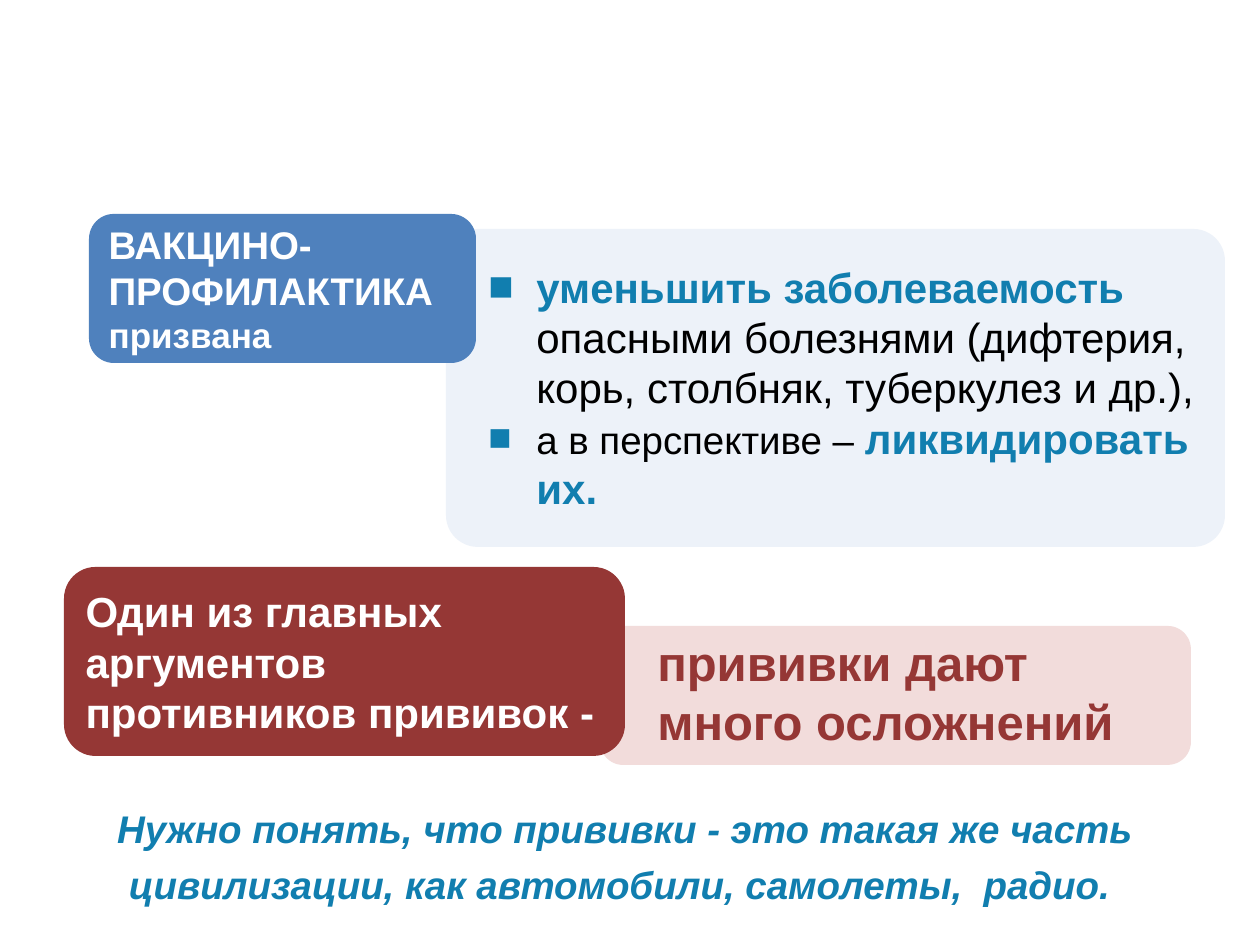
from lxml import etree
from pptx import Presentation
from pptx import util as u
from pptx.dml.color import RGBColor
from pptx.enum import shapes, text
from pptx.oxml import ns

PX = u.Inches(1) / 126
FONT = "Arial"
WHITE = RGBColor(0xFF, 0xFF, 0xFF)
BLACK = RGBColor(0x00, 0x00, 0x00)
TEAL = RGBColor(0x11, 0x7E, 0xAF)
BLUE = RGBColor(0x4F, 0x81, 0xBD)
PALE_BLUE = RGBColor(0xED, 0xF2, 0xF9)
RED = RGBColor(0x95, 0x37, 0x35)
PALE_RED = RGBColor(0xF2, 0xDC, 0xDB)


def px(*lengths):
    """Turn pixel lengths into EMU."""
    return [u.Emu(round(length * PX)) for length in lengths]


def add_panel(page, place, color, corner=None):
    """Add a plain filled rounded rectangle."""
    panel = page.shapes.add_shape(shapes.MSO_SHAPE.ROUNDED_RECTANGLE, *px(*place))
    panel.shadow.inherit = False
    panel.fill.solid()
    panel.fill.fore_color.rgb = color
    panel.line.fill.background()
    if corner is not None:
        panel.adjustments[0] = corner
    return panel


def add_text_box(page, place):
    """Add a wrapping text box that grows with its text."""
    box = page.shapes.add_textbox(*px(*place))
    box.text_frame.word_wrap = True
    box.text_frame.auto_size = text.MSO_AUTO_SIZE.SHAPE_TO_FIT_TEXT
    return box


def add_bullet(para):
    """Give a paragraph a hanging square bullet."""
    indent = px(48)[0]
    properties = para._p.get_or_add_pPr()
    properties.set("marL", str(indent))
    properties.set("indent", str(-indent))
    bullet_color = etree.SubElement(properties, ns.qn("a:buClr"))
    etree.SubElement(bullet_color, ns.qn("a:srgbClr"), val=str(TEAL))
    etree.SubElement(properties, ns.qn("a:buFont"), typeface=FONT)
    etree.SubElement(properties, ns.qn("a:buChar"), char="■")


def write(para, *pieces, align=text.PP_ALIGN.LEFT, italic=None):
    """Fill a paragraph with pieces of wording, size, colour and weight."""
    para.alignment = align
    for wording, size, color, bold in pieces:
        for number, line in enumerate(wording.split("\n")):
            if number:
                para.add_line_break()
            span = para.add_run()
            span.text = line
            span.font.name = FONT
            span.font.size = u.Pt(size)
            span.font.color.rgb = color
            span.font.bold = bold
            span.font.italic = italic


def add_goals(page):
    """Add the panel with the two goals of vaccination."""
    add_panel(page, (446, 229, 779, 318), PALE_BLUE, 0.1)
    frame = add_text_box(page, (476, 255, 745, 267)).text_frame
    goals = [
        [("уменьшить заболеваемость ", 24, TEAL, True),
         ("опасными болезнями (дифтерия, корь, столбняк, туберкулез и др.),",
          24, BLACK, False)],
        [("а в перспективе – ", 22, BLACK, False),
         ("ликвидировать их.", 24, TEAL, True)],
    ]
    for number, goal in enumerate(goals):
        para = frame.add_paragraph() if number else frame.paragraphs[0]
        add_bullet(para)
        write(para, *goal)


def add_label(page, place, color, *pieces):
    """Add a coloured panel with its own white text."""
    frame = add_panel(page, place, color).text_frame
    frame.word_wrap = True
    frame.vertical_anchor = text.MSO_ANCHOR.MIDDLE
    write(frame.paragraphs[0], *[(*piece, WHITE, True) for piece in pieces])


def add_conclusion(page):
    """Add the closing sentence."""
    para = add_text_box(page, (94, 790, 1062, 125)).text_frame.paragraphs[0]
    para.line_spacing = 1.2
    write(para, ("Нужно понять, что прививки - это такая же часть цивилизации, "
                 "как автомобили, самолеты,  радио. ", 22, TEAL, True),
          align=text.PP_ALIGN.CENTER, italic=True)


def add_claim(page):
    """Add the panel with the claim of the opponents."""
    add_panel(page, (600, 626, 591, 139), PALE_RED)
    box = add_text_box(page, (645, 626, 507, 131))
    write(box.text_frame.paragraphs[0],
          ("прививки дают\nмного осложнений", 28, RED, True))


def main():
    """Build the slide and save it."""
    deck = Presentation()
    deck.slide_width, deck.slide_height = px(1260, 945)
    page = deck.slides.add_slide(deck.slide_layouts[6])
    add_goals(page)
    add_label(page, (89, 214, 387, 149), BLUE,
              ("ВАКЦИНО-\nПРОФИЛАКТИКА ", 22), ("призвана", 20))
    add_conclusion(page)
    add_claim(page)
    add_label(page, (64, 567, 561, 189), RED,
              ("Один из главных аргументов\nпротивников прививок -", 24))
    deck.save("out.pptx")


if __name__ == "__main__":
    main()
